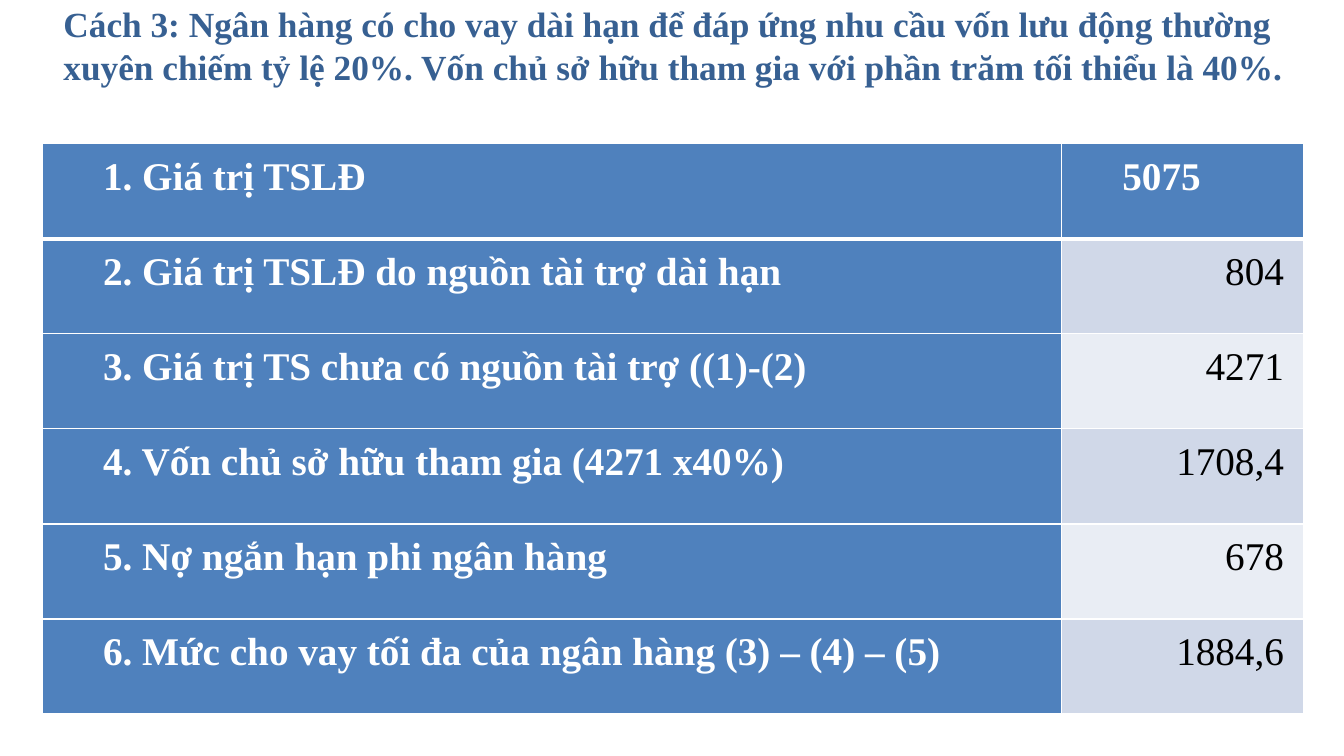
from lxml.etree import SubElement
from pptx import Presentation
from pptx.dml.color import RGBColor
from pptx.enum.text import MSO_ANCHOR, PP_ALIGN
from pptx.oxml.ns import qn
from pptx.util import Inches, Pt

FONT = "Times New Roman"
WHITE = RGBColor(0xFF, 0xFF, 0xFF)
BLACK = RGBColor(0x00, 0x00, 0x00)
TITLE_BLUE = RGBColor(0x37, 0x60, 0x92)
HEADER_BLUE = RGBColor(0x4F, 0x81, 0xBD)
BANDS = (RGBColor(0xE9, 0xED, 0xF4), RGBColor(0xD0, 0xD8, 0xE8))

TITLE = ("Cách 3: Ngân hàng có cho vay dài hạn để đáp ứng nhu cầu vốn lưu động "
         "thường xuyên chiếm tỷ lệ 20%. Vốn chủ sở hữu tham gia với phần trăm "
         "tối thiểu là 40%.")
LOAN_ROWS = [
    ("1. Giá trị TSLĐ ", "5075 "),
    ("2. Giá trị TSLĐ do nguồn tài trợ dài hạn ", "804 "),
    ("3. Giá trị TS chưa có nguồn tài trợ ((1)-(2) ", "4271 "),
    ("4. Vốn chủ sở hữu tham gia (4271 x40%) ", "1708,4 "),
    ("5. Nợ ngắn hạn phi ngân hàng ", "678 "),
    ("6. Mức cho vay tối đa của ngân hàng (3) – (4) – (5) ", "1884,6 "),
]


class SlideBuilder:
    """Places elements by percentages of the slide's width and height."""

    def __init__(self, deck):
        self.deck = deck
        self.page = deck.slides.add_slide(deck.slide_layouts[6])

    def across(self, percent):
        return round(self.deck.slide_width * percent / 100)

    def down(self, percent):
        return round(self.deck.slide_height * percent / 100)

    def style(self, paragraph, size, color, bold):
        font = paragraph.font
        font.name, font.size, font.bold = FONT, Pt(size), bold
        font.color.rgb = color

    def title(self, text, left, top, width, height):
        box = self.page.shapes.add_textbox(
            self.across(left), self.down(top), self.across(width), self.down(height))
        frame = box.text_frame
        frame.word_wrap = True
        frame.vertical_anchor = MSO_ANCHOR.MIDDLE
        frame.text = text
        self.style(frame.paragraphs[0], 25.2, TITLE_BLUE, True)

    def borders(self, cell, top, bottom):
        properties = cell._tc.get_or_add_tcPr()
        sides = {"a:lnL": 1, "a:lnR": 1, "a:lnT": top, "a:lnB": bottom}
        for position, (side, width) in enumerate(sides.items()):
            line = properties.makeelement(qn(side), {"w": str(Pt(width))})
            fill = SubElement(line, qn("a:solidFill"))
            SubElement(fill, qn("a:srgbClr"), val=str(WHITE))
            properties.insert(position, line)

    def cell(self, cell, text, row, is_label):
        strong = is_label or row == 0
        cell.fill.solid()
        cell.fill.fore_color.rgb = HEADER_BLUE if strong else BANDS[row % 2]
        cell.text = text
        paragraph = cell.text_frame.paragraphs[0]
        paragraph.alignment = PP_ALIGN.JUSTIFY if strong else PP_ALIGN.RIGHT
        paragraph.line_spacing = 1.15
        paragraph.space_after = Pt(10)
        properties = paragraph._p.get_or_add_pPr()
        properties.set("marL", str(Inches(0.5)))
        properties.set("indent", "0")
        self.style(paragraph, 28, WHITE if strong else BLACK, strong)
        self.borders(cell, top=3 if row == 1 else 1, bottom=3 if row == 0 else 1)

    def table(self, rows, left, top, column_widths, row_height):
        table = self.page.shapes.add_table(
            len(rows), len(column_widths), self.across(left), self.down(top),
            self.across(sum(column_widths)), self.down(row_height * len(rows))).table
        for column, width in zip(table.columns, column_widths):
            column.width = self.across(width)
        for row, texts in enumerate(rows):
            table.rows[row].height = self.down(row_height)
            for column, text in enumerate(texts):
                self.cell(table.cell(row, column), text, row, column == 0)


def main():
    deck = Presentation()
    deck.slide_width, deck.slide_height = Inches(13.33), Inches(7.5)
    slide = SlideBuilder(deck)

    # Heading
    slide.title(TITLE, left=3.98, top=0.4, width=94, height=11.07)

    # Loan calculation
    slide.table(LOAN_ROWS, left=3.17, top=18.99,
                column_widths=(75.84, 18), row_height=12.58)

    deck.save("out.pptx")


if __name__ == "__main__":
    main()
